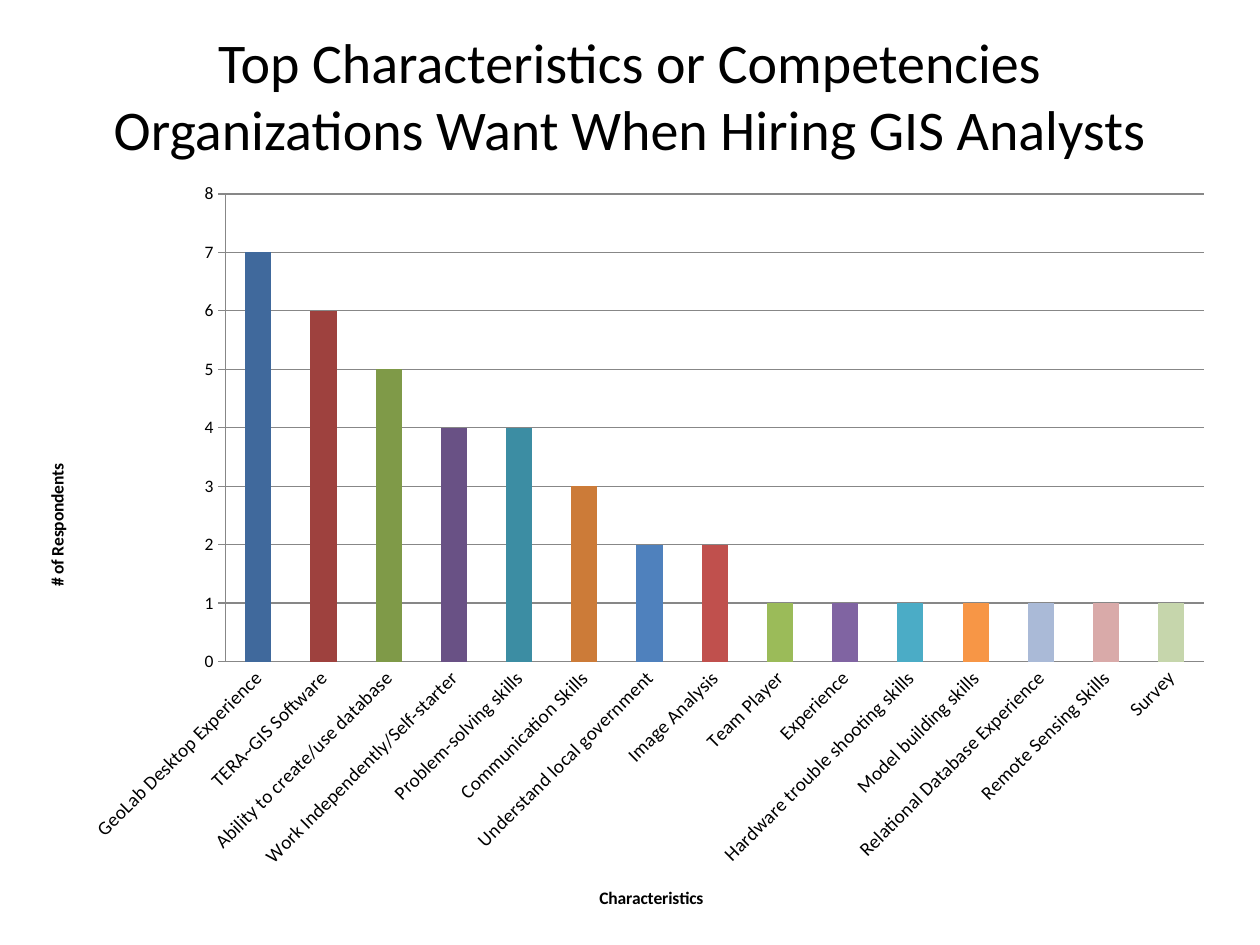
import pptx
import pptx.chart.data
import pptx.dml.color
import pptx.enum.chart
import pptx.enum.text
import pptx.oxml
import pptx.oxml.ns
import pptx.util

Cm = pptx.util.Cm
Pt = pptx.util.Pt
RGBColor = pptx.dml.color.RGBColor
Tick = pptx.enum.chart.XL_TICK_MARK

FONT = "Calibri"
BLACK = RGBColor(0x00, 0x00, 0x00)
GRAY = RGBColor(0x87, 0x87, 0x87)
BAR_COLORS = [
    RGBColor(0x40, 0x69, 0x9C), RGBColor(0x9E, 0x41, 0x3E), RGBColor(0x7F, 0x9A, 0x48),
    RGBColor(0x69, 0x51, 0x85), RGBColor(0x3C, 0x8D, 0xA3), RGBColor(0xCC, 0x7B, 0x38),
    RGBColor(0x4F, 0x81, 0xBD), RGBColor(0xC0, 0x50, 0x4D), RGBColor(0x9B, 0xBB, 0x59),
    RGBColor(0x80, 0x64, 0xA2), RGBColor(0x4B, 0xAC, 0xC6), RGBColor(0xF7, 0x96, 0x46),
    RGBColor(0xAA, 0xBA, 0xD7), RGBColor(0xD9, 0xAA, 0xA9), RGBColor(0xC6, 0xD6, 0xAC),
]
CHART_WIDTH = Cm(24.33)
CHART_HEIGHT = Cm(15.44)
RESPONDENTS = {
    "GeoLab Desktop Experience": 7,
    "TERA~GIS Software": 6,
    "Ability to create/use database": 5,
    "Work Independently/Self-starter": 4,
    "Problem-solving skills": 4,
    "Communication Skills": 3,
    "Understand local government": 2,
    "Image Analysis": 2,
    "Team Player": 1,
    "Experience": 1,
    "Hardware trouble shooting skills": 1,
    "Model building skills": 1,
    "Relational Database Experience": 1,
    "Remote Sensing Skills": 1,
    "Survey": 1,
}


def style_font(font, size, bold=False):
    font.name = FONT
    font.size = Pt(size)
    font.bold = bold
    font.color.rgb = BLACK


def set_layout(element, index, settings):
    for old_layout in element.xpath("c:layout"):
        element.remove(old_layout)
    entries = "".join(f'<c:{tag} val="{value}"/>' for tag, value in settings.items())
    element.insert(index, pptx.oxml.parse_xml(
        f'<c:layout {pptx.oxml.ns.nsdecls("c")}>'
        f"<c:manualLayout>{entries}</c:manualLayout></c:layout>"))


presentation = pptx.Presentation()
presentation.slide_width = Cm(25.4)
presentation.slide_height = Cm(19.05)
slide = presentation.slides.add_slide(presentation.slide_layouts[5])

headline = slide.shapes.title
headline.left, headline.top = Cm(1.27), Cm(0.42)
headline.width, headline.height = Cm(22.86), Cm(2.97)
headline.text_frame.vertical_anchor = pptx.enum.text.MSO_ANCHOR.MIDDLE
headline_paragraph = headline.text_frame.paragraphs[0]
headline_paragraph.alignment = pptx.enum.text.PP_ALIGN.CENTER
headline_run = headline_paragraph.add_run()
headline_run.text = "Top Characteristics or Competencies Organizations Want When Hiring GIS Analysts"
style_font(headline_run.font, 32)

survey_data = pptx.chart.data.CategoryChartData()
survey_data.categories = list(RESPONDENTS)
survey_data.add_series("Series 1", list(RESPONDENTS.values()))
survey_chart = slide.shapes.add_chart(
    pptx.enum.chart.XL_CHART_TYPE.COLUMN_CLUSTERED,
    Cm(0.43), Cm(3.38), CHART_WIDTH, CHART_HEIGHT, survey_data).chart
style_font(survey_chart.font, 10)
survey_chart.has_title = False
survey_chart.has_legend = False

bars = survey_chart.plots[0]
bars.gap_width = 150
bars.vary_by_categories = False
for index, color in enumerate(BAR_COLORS):
    bar_fill = bars.series[0].points[index].format.fill
    bar_fill.solid()
    bar_fill.fore_color.rgb = color

characteristics = survey_chart.category_axis
respondents = survey_chart.value_axis
for axis, label, label_size, tick, rotation, title_rotation, title_left, title_top in [
    (characteristics, "Characteristics", 11, Tick.NONE, -45, 0, Cm(11.59), Cm(14.43)),
    (respondents, "# of Respondents", 10, Tick.OUTSIDE, 0, -90, Cm(0.43), Cm(5.91)),
]:
    axis.major_tick_mark = tick
    axis.minor_tick_mark = Tick.NONE
    axis.format.line.color.rgb = GRAY
    axis.format.line.width = Pt(0.75)
    style_font(axis.tick_labels.font, label_size)
    axis._element.xpath("c:txPr/a:bodyPr")[0].set("rot", str(rotation * 60000))
    axis_title = axis.axis_title
    title_run = axis_title.text_frame.paragraphs[0].add_run()
    title_run.text = label
    style_font(title_run.font, 10, bold=True)
    title_body = axis_title._element.xpath("c:tx/c:rich/a:bodyPr")[0]
    title_body.set("rot", str(title_rotation * 60000))
    title_body.set("vert", "horz")
    set_layout(axis_title._element, 1, {
        "xMode": "edge", "yMode": "edge",
        "x": title_left / CHART_WIDTH, "y": title_top / CHART_HEIGHT})

respondents.minimum_scale = 0
respondents.maximum_scale = 8
respondents.major_unit = 1
respondents.has_major_gridlines = True
respondents.major_gridlines.format.line.color.rgb = GRAY
respondents.major_gridlines.format.line.width = Pt(0.75)

set_layout(survey_chart._chartSpace.xpath("c:chart/c:plotArea")[0], 0, {
    "layoutTarget": "inner", "xMode": "edge", "yMode": "edge",
    "x": Cm(4.12) / CHART_WIDTH, "y": Cm(0.53) / CHART_HEIGHT,
    "w": Cm(19.72) / CHART_WIDTH, "h": Cm(9.43) / CHART_HEIGHT})

presentation.save("out.pptx")
